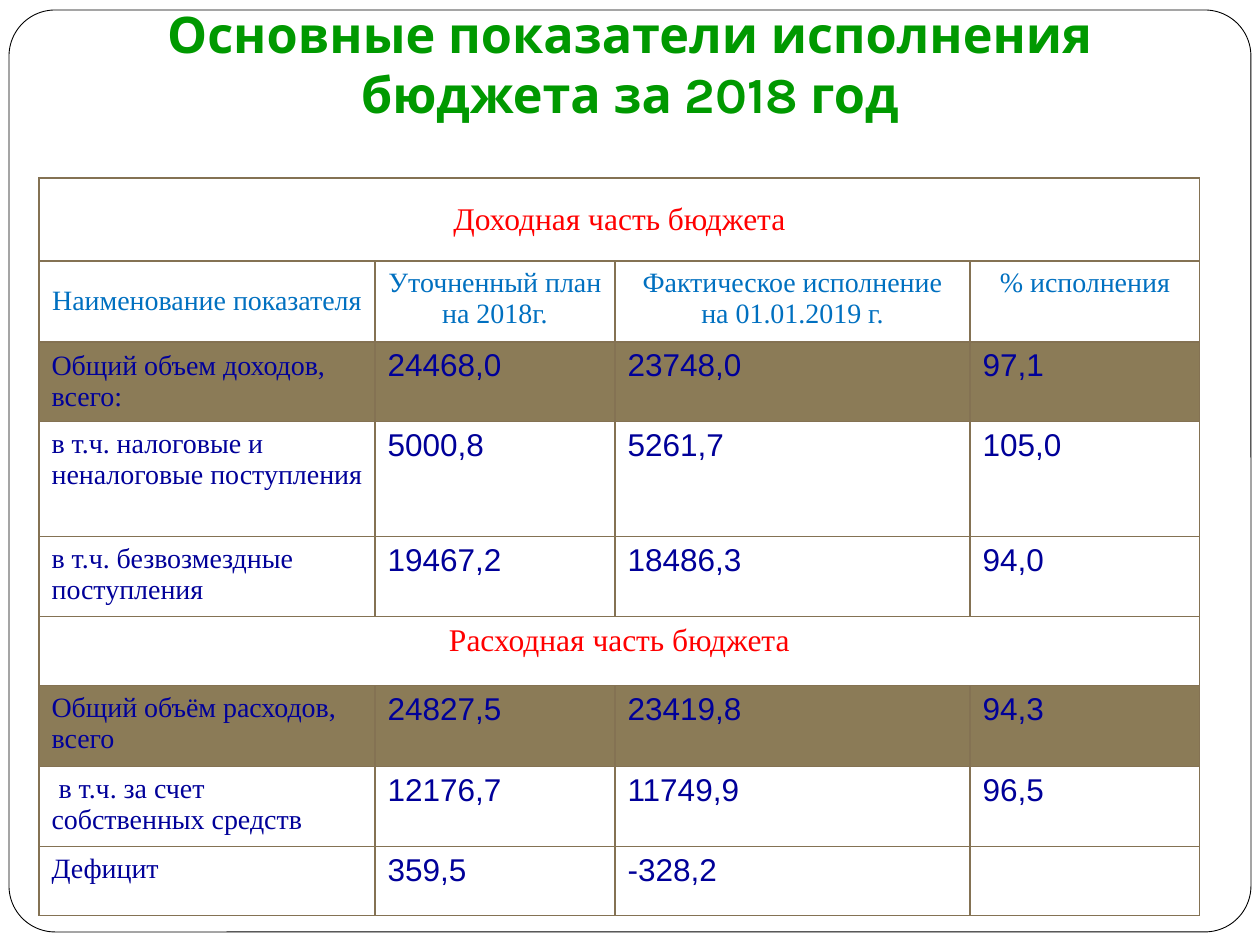
from pptx import Presentation
from pptx.dml.color import RGBColor as Rgb
from pptx.enum.shapes import MSO_SHAPE as Shape
from pptx.enum.text import MSO_ANCHOR as Anchor, MSO_AUTO_SIZE as Auto, PP_ALIGN as Align
from pptx.oxml import parse_xml
from pptx.oxml.ns import nsdecls
from pptx.util import Pt
from dataclasses import dataclass

TITLE = "Основные показатели исполнения бюджета за 2018 год"
ROWS = [
    ("part", 83, ["Доходная часть бюджета"]),
    ("head", 81, ["Наименование показателя", "Уточненный план на 2018г.",
                  "Фактическое исполнение на 01.01.2019 г.", "% исполнения"]),
    ("total", 80, ["Общий объем доходов, всего:", "24468,0", "23748,0", "97,1"]),
    ("item", 115, ["в т.ч. налоговые и неналоговые поступления", "5000,8", "5261,7", "105,0"]),
    ("item", 80, ["в т.ч. безвозмездные поступления", "19467,2", "18486,3", "94,0"]),
    ("part", 69, ["Расходная часть бюджета"]),
    ("total", 81, ["Общий объём расходов, всего", "24827,5", "23419,8", "94,3"]),
    ("item", 80, [" в т.ч. за счет собственных средств", "12176,7", "11749,9", "96,5"]),
    ("item", 69, ["Дефицит", "359,5", "-328,2", ""]),
]
COLS = [336, 240, 355, 230]
MIDDLE = {(0, 0), (1, 0), (2, 0)}


@dataclass(frozen=True)
class Theme:
    white: str = "FFFFFF"
    black: str = "000000"
    green: str = "009900"
    red: str = "FF0000"
    blue: str = "0070C0"
    navy: str = "000099"
    brown: str = "8B7B57"
    edge: str = "847253"
    display: str = "Karla"
    serif: str = "Times New Roman"
    sans: str = "Arial"
    big: float = 28.8
    mid: float = 18
    small: float = 16


T = Theme()
LABEL = dict(font=T.serif, size=T.small, color=T.navy)
VALUE = dict(font=T.sans, size=T.mid, color=T.navy)
PART = dict(font=T.serif, size=T.mid, color=T.red, align=Align.CENTER)
HEAD = dict(font=T.serif, size=T.small, color=T.blue, align=Align.CENTER)
STYLES = {"part": (PART, PART), "head": (HEAD, HEAD),
          "total": (LABEL, VALUE), "item": (LABEL, VALUE)}


def px(n):
    return round(n * 914400 / 126)


def write(frame, text, font, size, color, align=Align.LEFT, bold=False):
    para = frame.paragraphs[0]
    para.alignment = align
    run = para.add_run()
    run.text = text
    run.font.name = font
    run.font.size = Pt(size)
    run.font.bold = bold
    run.font.color.rgb = Rgb.from_string(color)


def border(cell):
    props = cell._tc.get_or_add_tcPr()
    for side in ("lnL", "lnR", "lnT", "lnB"):
        props.append(parse_xml(
            f'<a:{side} {nsdecls("a")} w="{Pt(0.75)}"><a:solidFill>'
            f'<a:srgbClr val="{T.edge}"/></a:solidFill></a:{side}>'))


def paint(fill, color):
    fill.solid()
    fill.fore_color.rgb = Rgb.from_string(color)


def add_title(slide):
    title = slide.shapes.title
    title.left, title.top, title.width, title.height = map(px, (63, 29, 1134, 108))
    frame = title.text_frame
    frame.word_wrap = True
    frame.auto_size = Auto.NONE
    frame.vertical_anchor = Anchor.BOTTOM
    frame.margin_bottom = px(13)
    write(frame, TITLE, T.display, T.big, T.green, Align.CENTER, bold=True)


def add_frame(slide):
    card = slide.shapes.add_shape(Shape.ROUNDED_RECTANGLE, *map(px, (9, 10, 1242, 922)))
    card.adjustments[0] = 0.05
    card.shadow.inherit = False
    paint(card.fill, T.white)
    card.line.color.rgb = Rgb.from_string(T.black)
    card.line.width = Pt(0.5)
    slide.shapes.title.element.addprevious(card.element)


def add_budget(slide):
    high = sum(row[1] for row in ROWS)
    table = slide.shapes.add_table(
        len(ROWS), len(COLS), *map(px, (39, 178, sum(COLS), high))).table
    table.first_row = table.horz_banding = False
    for col, wide in zip(table.columns, COLS):
        col.width = px(wide)
    for r, (kind, tall, texts) in enumerate(ROWS):
        table.rows[r].height = px(tall)
        if kind == "part":
            table.cell(r, 0).merge(table.cell(r, len(COLS) - 1))
        for c in range(len(COLS)):
            cell = table.cell(r, c)
            border(cell)
            paint(cell.fill, T.brown if kind == "total" else T.white)
            cell.vertical_anchor = Anchor.MIDDLE if (r, c) in MIDDLE else Anchor.TOP
            if c < len(texts) and texts[c]:
                write(cell.text_frame, texts[c], **STYLES[kind][c > 0])


def main():
    deck = Presentation()
    deck.slide_width, deck.slide_height = px(1260), px(945)
    slide = deck.slides.add_slide(deck.slide_layouts[5])
    paint(slide.background.fill, T.white)
    add_title(slide)
    add_frame(slide)
    add_budget(slide)
    deck.save("out.pptx")


if __name__ == "__main__":
    main()
